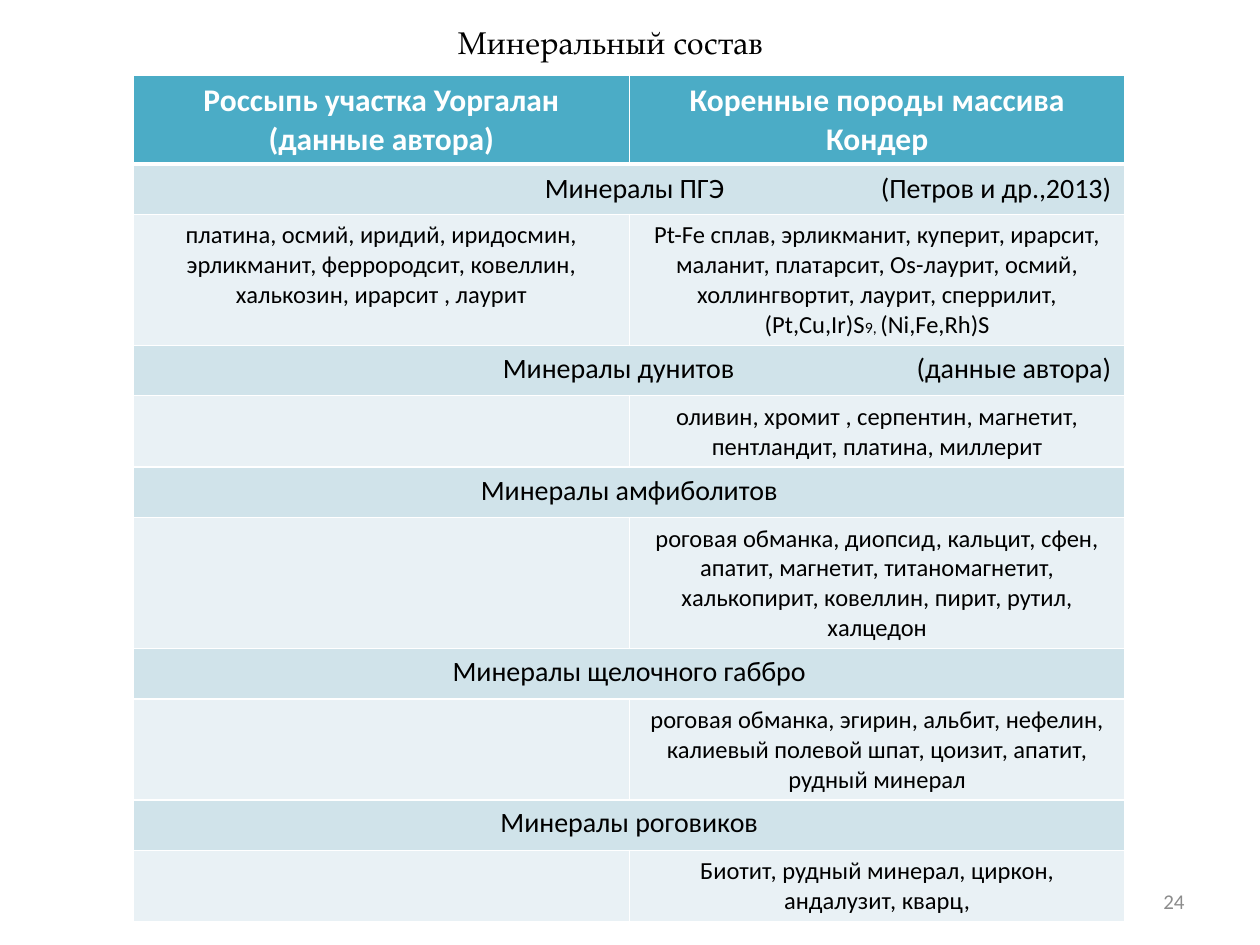
"""Build the slide comparing the minerals of a placer with those of its bedrock."""
from lxml import etree
from pptx import Presentation
from pptx.dml.color import RGBColor
from pptx.enum.text import MSO_ANCHOR, PP_ALIGN
from pptx.oxml.ns import qn
from pptx.util import Inches, Pt

TOP, MIDDLE = MSO_ANCHOR.TOP, MSO_ANCHOR.MIDDLE
LEFT, CENTER, RIGHT = PP_ALIGN.LEFT, PP_ALIGN.CENTER, PP_ALIGN.RIGHT
WHITE = RGBColor(0xFF, 0xFF, 0xFF)
BLACK = RGBColor(0x00, 0x00, 0x00)
GRAY = RGBColor(0x8C, 0x8C, 0x8C)
TEAL = RGBColor(0x4B, 0xAC, 0xC6)
SECTION_BLUE = RGBColor(0xD0, 0xE3, 0xEA)
PALE_BLUE = RGBColor(0xE9, 0xF1, 0xF5)
TABLE_WIDTH = 7.87
SECTION_HEIGHT = 0.4
SOURCE_STOP = 7.66

HEADERS = [["Россыпь участка Уоргалан", "(данные автора)"],
           ["Коренные породы массива Кондер"]]
SECTIONS = [
    ("Минералы ПГЭ", "(Петров и др.,2013)", 4.59, 1.04,
     "платина, осмий, иридий, иридосмин, эрликманит, феррородсит, ковеллин, "
     "халькозин, ирарсит , лаурит",
     [("Pt-Fe сплав, эрликманит, куперит, ирарсит, маланит, платарсит, "
       "Os-лаурит, осмий, холлингвортит, лаурит, сперрилит, (Pt,Cu,Ir)S", 14),
      ("9, ", 9), ("(Ni,Fe,Rh)S", 14)]),
    ("Минералы дунитов", "(данные автора)", 4.67, 0.56, "",
     [("оливин, хромит , серпентин, магнетит, пентландит, платина, миллерит", 14)]),
    ("Минералы амфиболитов", "", None, 1.04, "",
     [("роговая обманка, диопсид, кальцит, сфен, апатит, магнетит, "
       "титаномагнетит, халькопирит, ковеллин, пирит, рутил, халцедон", 14)]),
    ("Минералы щелочного габбро", "", None, 0.8, "",
     [("роговая обманка, эгирин, альбит, нефелин, калиевый полевой шпат, "
       "цоизит, апатит, рудный минерал", 14)]),
    ("Минералы роговиков", "", None, 0.56, "",
     [("Биотит, рудный минерал, циркон, андалузит, кварц,", 14)]),
]


def write(para, text, size, color=BLACK, align=CENTER, bold=False, font="Calibri"):
    para.alignment = align
    span = para.add_run()
    span.text = text
    span.font.size = Pt(size)
    span.font.name = font
    span.font.bold = bold
    span.font.color.rgb = color


def paint(cell, color, bottom=1):
    properties = cell._tc.get_or_add_tcPr()
    for side, width in (("lnL", 1), ("lnR", 1), ("lnT", 1), ("lnB", bottom)):
        line = etree.SubElement(properties, qn(f"a:{side}"), w=str(Pt(width)))
        solid = etree.SubElement(line, qn("a:solidFill"))
        etree.SubElement(solid, qn("a:srgbClr"), val=str(WHITE))
    cell.fill.solid()
    cell.fill.fore_color.rgb = color


deck = Presentation()
deck.slide_width, deck.slide_height = Inches(10), Inches(7.5)
page = deck.slides.add_slide(deck.slide_layouts[5])

title = page.shapes.title
title.left, title.top = Inches(3.35), Inches(0.13)
title.width, title.height = Inches(2.99), Inches(0.4)
title.text_frame.word_wrap = False
title.text_frame.vertical_anchor = TOP
write(title.text_frame.paragraphs[0], "Минеральный состав", 18,
      font="TeX Gyre Pagella")

number = page.shapes.add_textbox(Inches(7.17), Inches(6.95), Inches(2.33), Inches(0.4))
number.text_frame.word_wrap = True
number.text_frame.vertical_anchor = MIDDLE
write(number.text_frame.paragraphs[0], "24", 12, GRAY, RIGHT)

heights = [0.7]
for section in SECTIONS:
    heights += [SECTION_HEIGHT, section[3]]
table = page.shapes.add_table(len(heights), 2, Inches(1.06), Inches(0.6),
                              Inches(TABLE_WIDTH), Inches(sum(heights))).table
for column in table.columns:
    column.width = Inches(TABLE_WIDTH / 2)
for row, height in zip(table.rows, heights):
    row.height = Inches(height)

for column, lines in enumerate(HEADERS):
    cell = table.cell(0, column)
    paint(cell, TEAL, bottom=3)
    cell.vertical_anchor = MIDDLE
    for index, line in enumerate(lines):
        frame = cell.text_frame
        para = frame.add_paragraph() if index else frame.paragraphs[0]
        write(para, line, 18, WHITE, bold=True)

for index, (name, source, name_stop, height, placer, bedrock) in enumerate(SECTIONS):
    row = 1 + 2 * index
    heading = table.cell(row, 0)
    heading.merge(table.cell(row, 1))
    for column in range(2):
        paint(table.cell(row, column), SECTION_BLUE)
        paint(table.cell(row + 1, column), PALE_BLUE)
    heading.vertical_anchor = TOP if index else MIDDLE
    para = heading.text_frame.paragraphs[0]
    if source:
        stops = etree.SubElement(para._p.get_or_add_pPr(), qn("a:tabLst"))
        for stop in (name_stop, SOURCE_STOP):
            etree.SubElement(stops, qn("a:tab"), pos=str(Inches(stop)), algn="r")
        write(para, f"\t{name}\t{source}", 16, align=LEFT)
    else:
        write(para, name, 16)
    if placer:
        write(table.cell(row + 1, 0).text_frame.paragraphs[0], placer, 14)
    for text, size in bedrock:
        write(table.cell(row + 1, 1).text_frame.paragraphs[0], text, size)

deck.save("out.pptx")
